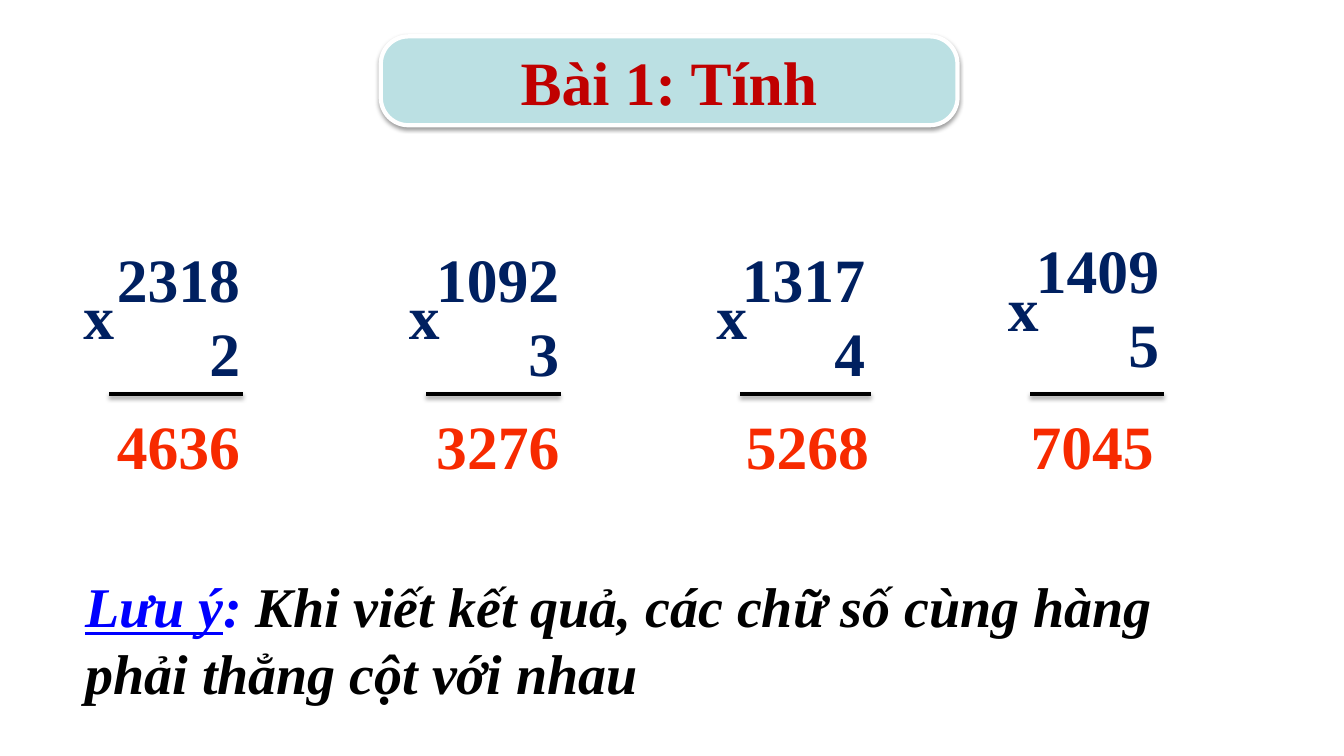
from lxml.etree import SubElement
from pptx import Presentation
from pptx.dml.color import RGBColor
from pptx.enum.shapes import MSO_CONNECTOR, MSO_SHAPE
from pptx.enum.text import MSO_ANCHOR, PP_ALIGN
from pptx.oxml.ns import qn
from pptx.util import Pt

COLOURS = {
    "factor": "002060", "result": "F72A00", "title": "C00000",
    "panel": "BBE0E3", "border": "FFFFFF", "ink": "000000", "note": "0000FF",
}
FACTOR_WIDTH, FACTOR_HEIGHT, FACTOR_INSET = 128, 78, 21

# factors, result, right edge of factors, their bottom, centre of sign,
# left of result, left and right end of the rule
PRODUCTS = [
    (("2318", "2"), "4636", 171.5, 281, 70.5, 76.3, 78, 173.8),
    (("1092", "3"), "3276", 399.5, 281, 303, 304.5, 304.6, 400.4),
    (("1317", "4"), "5268", 618, 281, 522.7, 525.6, 528.5, 622),
    (("1409", "5"), "7045", 828, 275, 731, 729, 735.8, 831.6),
]


def colour(name):
    return RGBColor.from_string(COLOURS[name])


class SlidePainter:
    def __init__(self, page, font_name="Times New Roman"):
        self.page = page
        self.font_name = font_name

    def fill_frame(self, frame, spans, align, **frame_format):
        """Fill a text frame with one paragraph of (text, colour, font format) spans."""
        frame.word_wrap = True
        for key, value in frame_format.items():
            setattr(frame, key, value)
        para = frame.paragraphs[0]
        para.alignment = align
        for text, colour_name, font_format in spans:
            for index, part in enumerate(text.split("\n")):
                if index:
                    para.add_line_break()
                span = para.add_run()
                span.text = part
                settings = {"name": self.font_name, "size": Pt(44), "bold": True}
                for key, value in (settings | font_format).items():
                    setattr(span.font, key, value)
                span.font.color.rgb = colour(colour_name)

    def text(self, left, top, width, height, spans, align=PP_ALIGN.LEFT, **frame_format):
        box = self.page.shapes.add_textbox(Pt(left), Pt(top), Pt(width), Pt(height))
        self.fill_frame(box.text_frame, spans, align, **frame_format)

    def shadow(self, shape, distance, opacity):
        """Cast a soft black shadow straight down."""
        effects = SubElement(shape._element.spPr, qn("a:effectLst"))
        outer = SubElement(effects, qn("a:outerShdw"), blurRad=str(Pt(3.1)),
                           dist=str(Pt(distance)), dir="5400000", rotWithShape="0")
        black = SubElement(outer, qn("a:srgbClr"), val=COLOURS["ink"])
        SubElement(black, qn("a:alpha"), val=str(opacity * 1000))

    def rule(self, start, end, y):
        line = self.page.shapes.add_connector(
            MSO_CONNECTOR.STRAIGHT, Pt(start), Pt(y), Pt(end), Pt(y))
        line.line.color.rgb = colour("ink")
        line.line.width = Pt(3)
        self.shadow(line, 1.8, 35)

    def banner(self, left, top, width, height, title):
        panel = self.page.shapes.add_shape(
            MSO_SHAPE.ROUNDED_RECTANGLE, Pt(left), Pt(top), Pt(width), Pt(height))
        panel.adjustments[0] = 0.31
        panel.fill.solid()
        panel.fill.fore_color.rgb = colour("panel")
        panel.line.color.rgb = colour("border")
        panel.line.width = Pt(3)
        self.shadow(panel, 1.6, 38)
        self.fill_frame(panel.text_frame, [(title, "title", {})], PP_ALIGN.CENTER,
                        vertical_anchor=MSO_ANCHOR.MIDDLE)

    def product(self, factors, result, right, bottom, sign, result_left, start, end):
        """Draw one written multiplication."""
        self.text(right + FACTOR_INSET - FACTOR_WIDTH, bottom - FACTOR_HEIGHT,
                  FACTOR_WIDTH, FACTOR_HEIGHT,
                  [("\n".join(factors), "factor", {})], PP_ALIGN.RIGHT,
                  vertical_anchor=MSO_ANCHOR.BOTTOM, margin_right=Pt(FACTOR_INSET))
        self.text(sign - 44, bottom - 56, 88, 30, [("x", "factor", {})],
                  PP_ALIGN.CENTER, vertical_anchor=MSO_ANCHOR.BOTTOM)
        self.rule(start, end, 281.5)
        self.text(result_left, 288, 120, 60.5, [(result, "result", {})])


def main():
    deck = Presentation()
    deck.slide_width, deck.slide_height = Pt(960), Pt(540)
    painter = SlidePainter(deck.slides.add_slide(deck.slide_layouts[6]))
    painter.banner(272, 26, 412, 63.5, "Bài 1: Tính")
    for product in PRODUCTS:
        painter.product(*product)
    note = {"size": Pt(40), "italic": True}
    painter.text(54, 404.6, 800, 104.4, [
        ("Lưu ý", "note", note | {"underline": True}),
        (": ", "note", note),
        ("Khi viết kết quả, các chữ số cùng hàng phải thẳng cột với nhau", "ink", note),
    ])
    deck.save("out.pptx")


if __name__ == "__main__":
    main()
